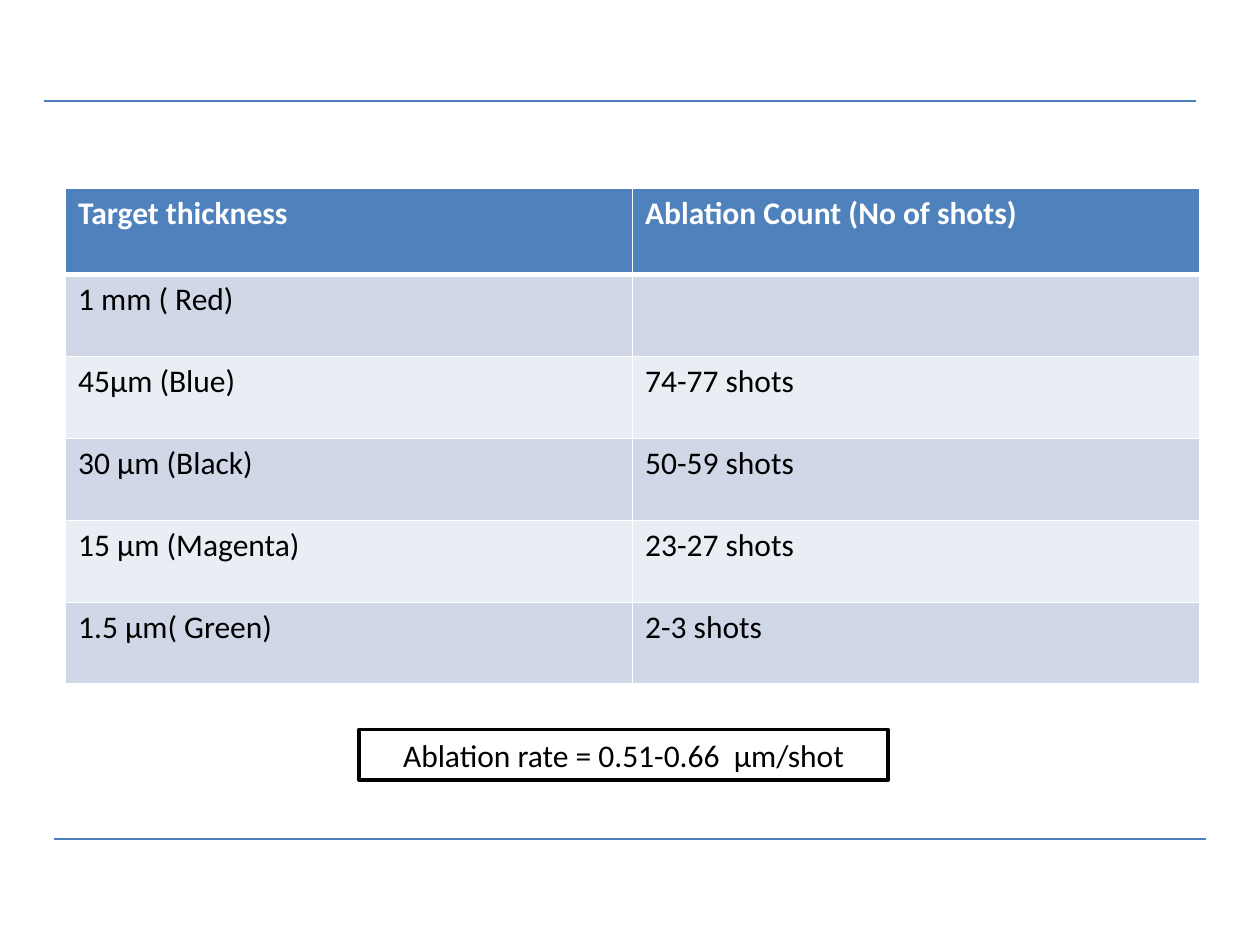
from dataclasses import dataclass

from lxml import etree
from pptx import Presentation
from pptx import util as u
from pptx.dml.color import RGBColor
from pptx.enum import shapes, text
from pptx.oxml.ns import qn

COLORS = {
    "rule": "4B7EBC",
    "header": "4F81BD",
    "band_dark": "D0D8E8",
    "band_light": "E9EDF4",
    "white": "FFFFFF",
    "black": "000000",
}
SLIDE_W, SLIDE_H = 10, 7.5
FONT, FONT_SIZE = "Calibri", 18
HEADER_H, BODY_H = 0.69, 0.65


@dataclass
class Rule:
    left: float
    right: float
    y: float


@dataclass
class Measurement:
    thickness: str
    shots: str


RULES = [Rule(0.35, 9.49, 0.8), Rule(0.43, 9.57, 6.66)]
HEADINGS = Measurement("Target thickness", "Ablation Count (No of shots)")
MEASUREMENTS = [
    Measurement("1 mm ( Red)", ""),
    Measurement("45µm (Blue)", "74-77 shots"),
    Measurement("30 µm (Black)", "50-59 shots"),
    Measurement("15 µm (Magenta)", "23-27 shots"),
    Measurement("1.5 µm( Green)", "2-3 shots"),
]


def rgb(name: str) -> RGBColor:
    return RGBColor.from_string(COLORS[name])


def style_paragraph(paragraph, color: str, bold: bool = False) -> None:
    font = paragraph.font
    font.name, font.size, font.bold = FONT, u.Pt(FONT_SIZE), bold
    font.color.rgb = rgb(color)


def draw_rule(slide, rule: Rule) -> None:
    y = u.Inches(rule.y)
    line = slide.shapes.add_connector(
        shapes.MSO_CONNECTOR.STRAIGHT, u.Inches(rule.left), y, u.Inches(rule.right), y)
    line.line.color.rgb = rgb("rule")
    line.line.width = u.Pt(1)
    etree.SubElement(line._element.spPr, qn("a:effectLst"))


def set_borders(cell, top: float, bottom: float) -> None:
    """Draw white cell borders; side borders are 1 pt wide."""
    properties = cell._tc.get_or_add_tcPr()
    widths = {"lnL": 1, "lnR": 1, "lnT": top, "lnB": bottom}
    for position, (side, width) in enumerate(widths.items()):
        border = etree.Element(qn(f"a:{side}"), w=str(u.Pt(width)))
        fill = etree.SubElement(border, qn("a:solidFill"))
        etree.SubElement(fill, qn("a:srgbClr"), val=COLORS["white"])
        properties.insert(position, border)


def draw_table(slide, left: float, top: float, width: float) -> None:
    rows = [HEADINGS, *MEASUREMENTS]
    height = HEADER_H + BODY_H * len(MEASUREMENTS)
    table = slide.shapes.add_table(
        len(rows), 2, u.Inches(left), u.Inches(top), u.Inches(width), u.Inches(height)).table
    for r, row in enumerate(rows):
        is_header = r == 0
        table.rows[r].height = u.Inches(HEADER_H if is_header else BODY_H)
        band = "header" if is_header else ("band_dark" if r % 2 else "band_light")
        for c, wording in enumerate((row.thickness, row.shots)):
            cell = table.cell(r, c)
            cell.text = wording
            cell.fill.solid()
            cell.fill.fore_color.rgb = rgb(band)
            style_paragraph(cell.text_frame.paragraphs[0],
                            "white" if is_header else "black", is_header)
            set_borders(cell, top=3 if r == 1 else 1, bottom=3 if is_header else 1)


def draw_result(slide, wording: str, left: float, top: float,
                width: float, height: float) -> None:
    result = slide.shapes.add_shape(
        shapes.MSO_SHAPE.RECTANGLE, u.Inches(left), u.Inches(top),
        u.Inches(width), u.Inches(height))
    result.shadow.inherit = False
    result.fill.solid()
    result.fill.fore_color.rgb = rgb("white")
    result.line.color.rgb = rgb("black")
    result.line.width = u.Pt(2)
    frame = result.text_frame
    frame.word_wrap = True
    frame.auto_size = text.MSO_AUTO_SIZE.SHAPE_TO_FIT_TEXT
    frame.text = wording
    frame.paragraphs[0].alignment = text.PP_ALIGN.CENTER
    style_paragraph(frame.paragraphs[0], "black")


def main() -> None:
    deck = Presentation()
    deck.slide_width, deck.slide_height = u.Inches(SLIDE_W), u.Inches(SLIDE_H)
    slide = deck.slides.add_slide(deck.slide_layouts[6])

    # Rules above and below the content
    for rule in RULES:
        draw_rule(slide, rule)

    # Shots needed for each target thickness
    draw_table(slide, left=0.52, top=1.49, width=0.9 * SLIDE_W)

    # Resulting ablation rate
    draw_result(slide, "Ablation rate = 0.51-0.66  µm/shot",
                left=2.85, top=5.79, width=0.42 * SLIDE_W, height=0.4)

    deck.save("out.pptx")


if __name__ == "__main__":
    main()
